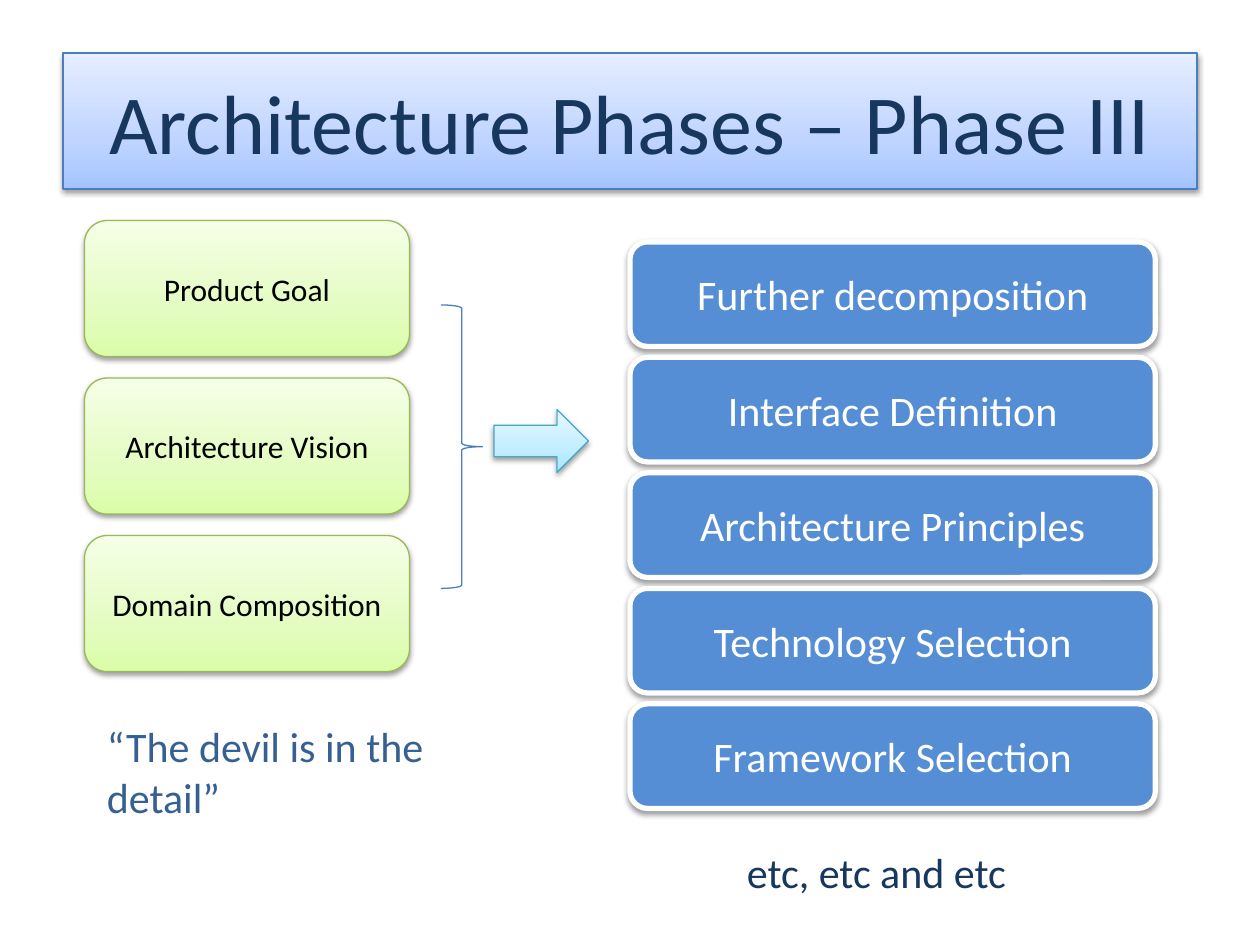
import pptx
import pptx.util
import pptx.dml.color
import pptx.enum.shapes
import pptx.enum.text
import pptx.oxml.ns
import lxml.etree

Inches = pptx.util.Inches
Pt = pptx.util.Pt
KIND = pptx.enum.shapes.MSO_SHAPE
ALIGN = pptx.enum.text.PP_ALIGN
ANCHOR = pptx.enum.text.MSO_ANCHOR
FIT = pptx.enum.text.MSO_AUTO_SIZE
qn = pptx.oxml.ns.qn

NAVY, EDGE, WHITE = "17375E", "4B7EBC", "FFFFFF"
BLUES = ("A4C4FF", "BFD4FF", "E6EEFF")
GREENS = ("DAFDA7", "E4FCC2", "F5FFE7")
CYANS = ("A7E6FF", "C1EDFF", "E7F8FF")


def rgb(code):
    return pptx.dml.color.RGBColor.from_string(code)


def add(parent, tag, **attrs):
    """Append an XML child with the given attributes."""
    node = lxml.etree.SubElement(parent, qn(tag))
    for name, value in attrs.items():
        node.set(name, str(value))
    return node


class Deck:
    """Holds the text style and the current slide."""

    font = "Calibri"

    def __init__(self):
        self.prs = pptx.Presentation()
        self.prs.slide_width = Inches(10)
        self.prs.slide_height = Inches(7.5)
        self.slide = self.prs.slides.add_slide(self.prs.slide_layouts[5])

    def label(self, shape, text, size, color, align=ALIGN.CENTER):
        frame = shape.text_frame
        frame.word_wrap = True
        para = frame.paragraphs[0]
        para.alignment = align
        run = para.add_run()
        run.text = text
        run.font.name = self.font
        run.font.size = Pt(size)
        run.font.color.rgb = rgb(color)
        return frame

    def paint(self, shape, fill, edge, width=0.75):
        """Add a plain or three-stop fill, an outline and a soft shadow."""
        props = shape.element.spPr
        if isinstance(fill, str):
            shape.fill.solid()
            shape.fill.fore_color.rgb = rgb(fill)
        else:
            shape.fill.gradient()
            shape.fill.gradient_angle = 90
            stops = props.find(".//" + qn("a:gsLst"))
            for old in list(stops):
                stops.remove(old)
            for pos, code in zip((0, 35000, 100000), fill):
                add(add(stops, "a:gs", pos=pos), "a:srgbClr", val=code)
        shape.line.color.rgb = rgb(edge)
        shape.line.width = Pt(width)
        glow = add(add(props, "a:effectLst"), "a:outerShdw", blurRad=40000,
                   dist=20000, dir=5400000, rotWithShape=0)
        add(add(glow, "a:srgbClr", val="000000"), "a:alpha", val=38000)

    def title(self, text, *box):
        shape = self.slide.shapes.title
        shape.left, shape.top, shape.width, shape.height = map(Inches, box)
        geom = add(shape.element.spPr, "a:prstGeom", prst="roundRect")
        add(geom, "a:avLst")
        self.paint(shape, BLUES, EDGE)
        frame = self.label(shape, text, 48, NAVY)
        frame.auto_size = FIT.NONE
        frame.vertical_anchor = ANCHOR.MIDDLE

    def shape(self, kind, *box):
        return self.slide.shapes.add_shape(kind, *map(Inches, box))

    def card(self, text, size, color, fill, edge, width, *box):
        shape = self.shape(KIND.ROUNDED_RECTANGLE, *box)
        self.paint(shape, fill, edge, width)
        self.label(shape, text, size, color).vertical_anchor = ANCHOR.MIDDLE

    def arrow(self, *box):
        self.paint(self.shape(KIND.RIGHT_ARROW, *box), CYANS, "46AAC5")

    def brace(self, *box):
        shape = self.shape(KIND.RIGHT_BRACE, *box)
        shape.fill.background()
        shape.line.color.rgb = rgb(EDGE)
        shape.line.width = Pt(0.75)
        shape.shadow.inherit = False

    def note(self, text, color, *box):
        shape = self.slide.shapes.add_textbox(*map(Inches, box))
        frame = self.label(shape, text, 24, color, ALIGN.LEFT)
        frame.auto_size = FIT.SHAPE_TO_FIT_TEXT


def main():
    deck = Deck()
    deck.title("Architecture Phases – Phase III", 0.5, 0.42, 9, 1.08)

    inputs = ("Product Goal", "Architecture Vision", "Domain Composition")
    for row, text in enumerate(inputs):
        deck.card(text, 18, "000000", GREENS, "98B955", 0.75,
                  0.67, 1.75 + 1.25 * row, 2.58, 1.08)

    deck.brace(3.5, 2.42, 0.33, 2.25)
    deck.arrow(3.92, 3.25, 0.75, 0.5)

    tasks = ("Further decomposition", "Interface Definition",
             "Architecture Principles", "Technology Selection",
             "Framework Selection")
    pitch = 11 / 12
    for row, text in enumerate(tasks):
        deck.card(text, 24, WHITE, "558ED5", WHITE, 3,
                  5, 1.92 + pitch * row, 4.17, 0.83)

    deck.note("“The devil is in the detail”", "376092",
              0.75, 5.67, 3.33, 0.91)
    deck.note("etc, etc and etc", NAVY, 5.83, 6.67, 2.5, 0.5)
    deck.prs.save("out.pptx")


if __name__ == "__main__":
    main()
